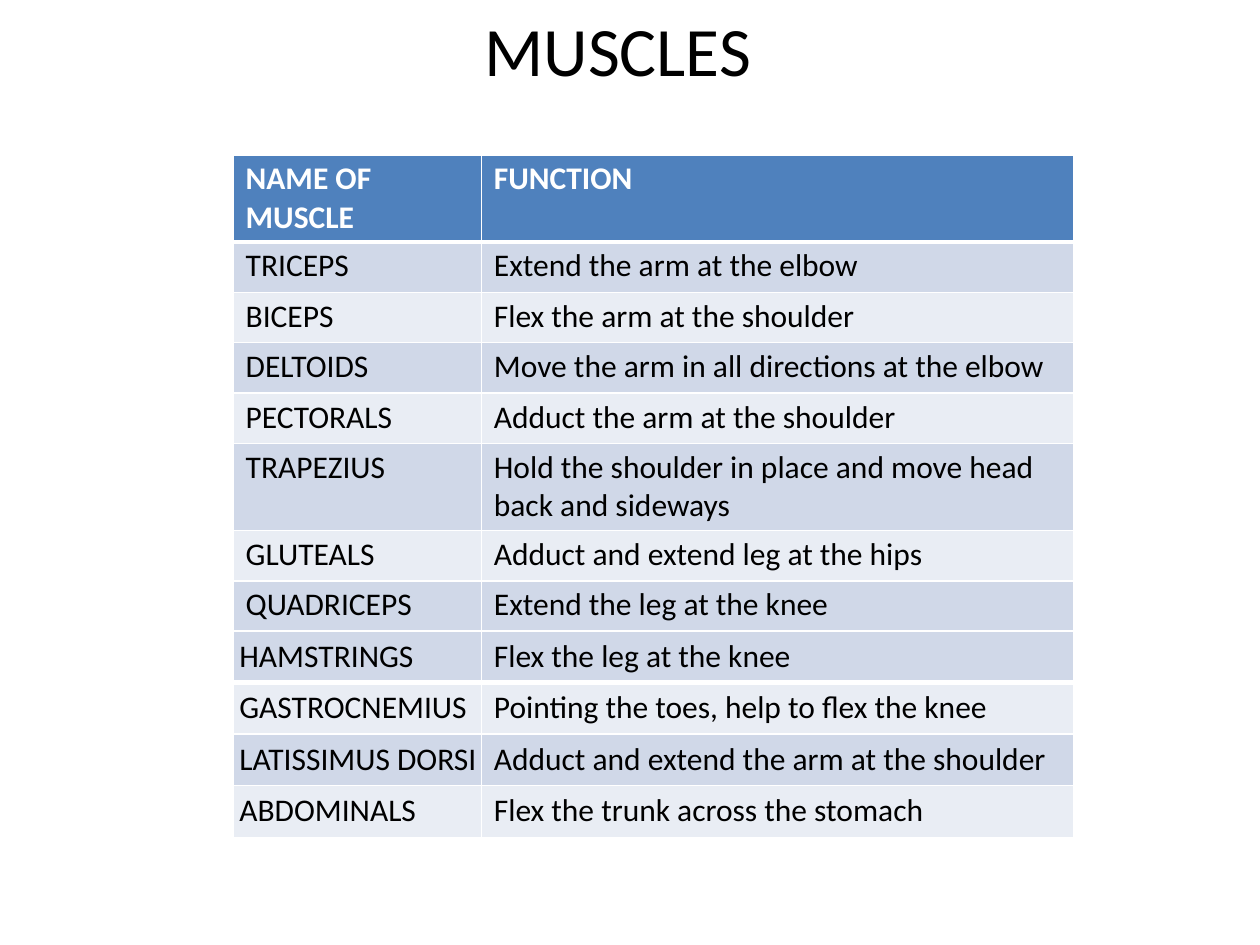
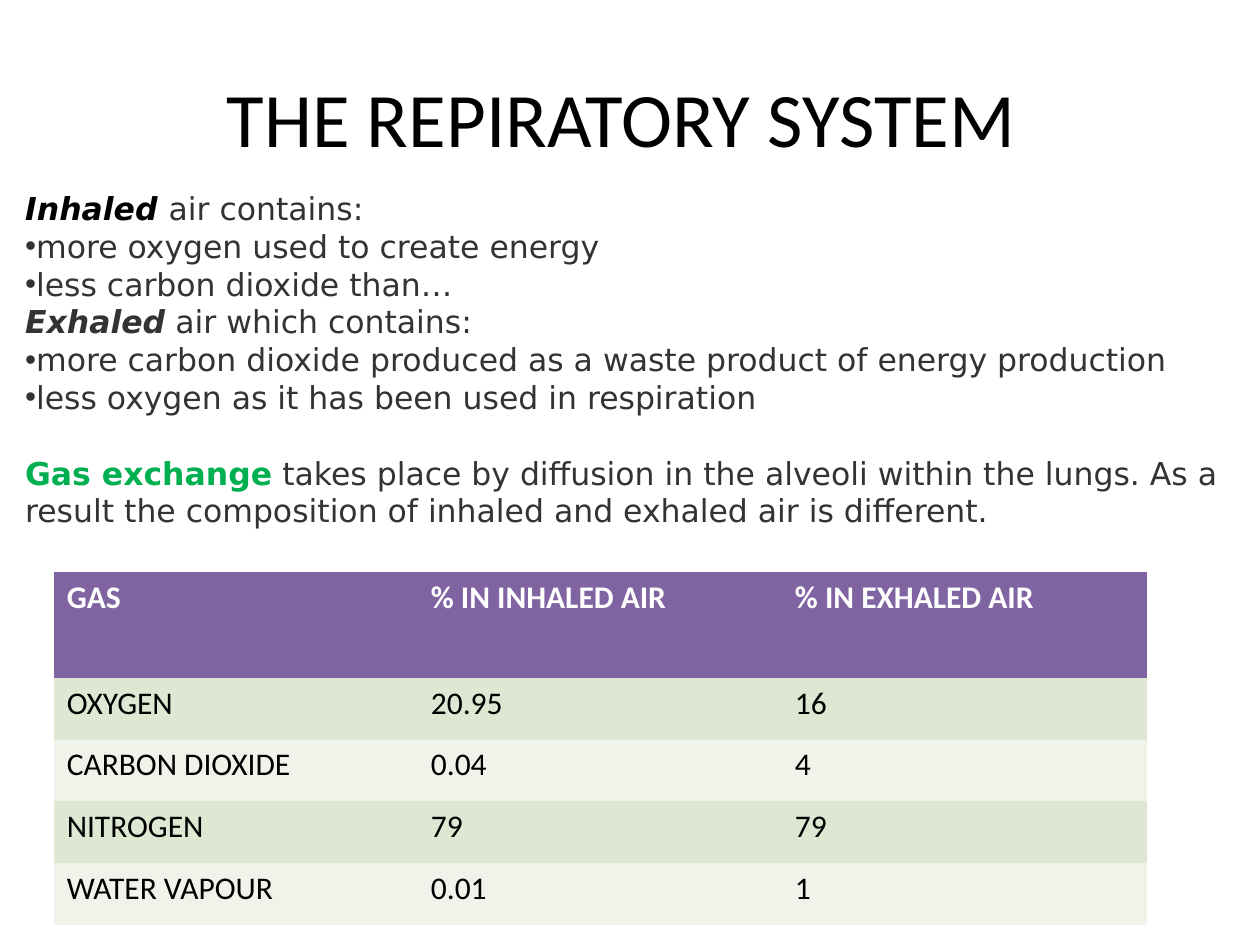
from dataclasses import dataclass
from typing import NamedTuple

from lxml.etree import SubElement
from pptx import Presentation
from pptx.dml.color import RGBColor
from pptx.enum.text import MSO_ANCHOR, MSO_AUTO_SIZE, PP_ALIGN
from pptx.oxml.ns import qn
from pptx.slide import Slide
from pptx.table import _Cell
from pptx.text.text import _Paragraph
from pptx.util import Inches, Pt


# Shared look
@dataclass(frozen=True)
class Theme:
    heading_font: str = "Calibri"
    body_font: str = "DejaVu Sans"
    bullet_font: str = "Arial"
    black: str = "000000"
    white: str = "FFFFFF"
    grey: str = "333333"
    green: str = "00B050"
    blue: str = "4F81BD"
    purple: str = "8064A2"
    blue_bands: tuple[str, str] = ("D0D8E8", "E9EDF4")
    green_bands: tuple[str, str] = ("DEE7D1", "EFF3EA")
    title_size: float = 44
    small_title_size: float = 39.6
    text_size: float = 18
    grid_width: float = 1
    thick_grid_width: float = 3


THEME = Theme()
TITLE_ONLY_LAYOUT = 5


class Box(NamedTuple):
    left: float
    top: float
    width: float
    height: float

    def lengths(self) -> list[int]:
        return [Inches(value) for value in self]


class Span(NamedTuple):
    text: str
    color: str = THEME.grey
    bold: bool = False
    italic: bool = False


class Line(NamedTuple):
    spans: list[Span]
    bullet: bool = False
    space_before: float = 0


@dataclass(frozen=True)
class TableSpec:
    box: Box
    column_widths: list[float]
    row_heights: list[float]
    rows: list[tuple[str, ...]]
    bands: tuple[str, str]
    header_fill: str = ""  # empty: the table has no header row
    has_grid: bool = True
    tight_first_column: bool = False
    vertical_margin: float = 0.05


def add_run(paragraph: _Paragraph, span: Span, font: str, size: float) -> None:
    run = paragraph.add_run()
    run.text = span.text
    run.font.name = font
    run.font.size = Pt(size)
    run.font.bold = span.bold
    run.font.italic = span.italic
    run.font.color.rgb = RGBColor.from_string(span.color)


def add_titled_slide(presentation: Presentation, text: str, box: Box, size: float) -> Slide:
    slide = presentation.slides.add_slide(presentation.slide_layouts[TITLE_ONLY_LAYOUT])
    title = slide.shapes.title
    title.left, title.top, title.width, title.height = box.lengths()
    frame = title.text_frame
    frame.auto_size = MSO_AUTO_SIZE.NONE
    frame.vertical_anchor = MSO_ANCHOR.MIDDLE
    paragraph = frame.paragraphs[0]
    paragraph.alignment = PP_ALIGN.CENTER
    add_run(paragraph, Span(text, THEME.black), THEME.heading_font, size)
    return slide


def set_borders(cell: _Cell, has_grid: bool, bottom_width: float) -> None:
    properties = cell._tc.get_or_add_tcPr()
    for index, side in enumerate(("lnL", "lnR", "lnT", "lnB")):
        width = bottom_width if side == "lnB" else THEME.grid_width
        border = SubElement(properties, qn(f"a:{side}"), w=str(Pt(width)))
        if has_grid:
            fill = SubElement(border, qn("a:solidFill"))
            SubElement(fill, qn("a:srgbClr"), val=THEME.white)
        else:
            SubElement(border, qn("a:noFill"))
        properties.insert(index, border)  # borders come before the fill


def add_data_table(slide: Slide, spec: TableSpec) -> None:
    graphic_frame = slide.shapes.add_table(
        len(spec.rows), len(spec.column_widths), *spec.box.lengths())
    table = graphic_frame.table
    table.first_row = bool(spec.header_fill)
    for column, width in zip(table.columns, spec.column_widths):
        column.width = Inches(width)
    for row, height in zip(table.rows, spec.row_heights):
        row.height = Inches(height)

    for row_index, texts in enumerate(spec.rows):
        is_header = row_index == 0 and bool(spec.header_fill)
        band = spec.bands[(row_index + 1) % 2]
        bottom_width = THEME.thick_grid_width if row_index == 0 else THEME.grid_width
        for column_index, text in enumerate(texts):
            cell = table.cell(row_index, column_index)
            cell.fill.solid()
            cell.fill.fore_color.rgb = RGBColor.from_string(
                spec.header_fill if is_header else band)
            set_borders(cell, spec.has_grid, bottom_width)
            cell.margin_top = cell.margin_bottom = Inches(spec.vertical_margin)
            if spec.tight_first_column and column_index == 0:
                cell.margin_left = Inches(0.05)
                cell.margin_right, cell.margin_bottom = Inches(0.03), Inches(0.01)
            color = THEME.white if is_header else THEME.black
            add_run(cell.text_frame.paragraphs[0], Span(text, color, is_header),
                    THEME.heading_font, THEME.text_size)


def add_bullet(paragraph: _Paragraph) -> None:
    properties = paragraph._p.get_or_add_pPr()
    properties.set("marL", "0")
    properties.set("indent", "0")
    SubElement(properties, qn("a:buFont"), typeface=THEME.bullet_font)
    SubElement(properties, qn("a:buChar"), char="•")


def add_body_text(slide: Slide, box: Box, lines: list[Line]) -> None:
    frame = slide.shapes.add_textbox(*box.lengths()).text_frame
    frame.word_wrap = True
    frame.vertical_anchor = MSO_ANCHOR.TOP
    frame.margin_left = frame.margin_right = frame.margin_bottom = 0
    frame.margin_top = Inches(0.03)
    for index, line in enumerate(lines):
        paragraph = frame.add_paragraph() if index else frame.paragraphs[0]
        paragraph.space_before = Pt(line.space_before)
        if line.bullet:
            add_bullet(paragraph)
        for span in line.spans:
            add_run(paragraph, span, THEME.body_font, THEME.text_size)


# Slide content
MUSCLE_COLUMNS = [1.97, 4.7]
ONE_LINE_ROW, TWO_LINE_ROW = 0.4, 0.69

# The upper table ends exactly where the lower one starts
UPPER_MUSCLES = TableSpec(
    box=Box(1.85, 1.23, 6.67, 3.78),
    column_widths=MUSCLE_COLUMNS,
    row_heights=[TWO_LINE_ROW, *[ONE_LINE_ROW] * 4, TWO_LINE_ROW, *[ONE_LINE_ROW] * 2],
    rows=[
        ("NAME OF MUSCLE", "FUNCTION"),
        ("TRICEPS", "Extend the arm at the elbow"),
        ("BICEPS", "Flex the arm at the shoulder"),
        ("DELTOIDS", "Move the arm in all directions at the elbow"),
        ("PECTORALS", "Adduct the arm at the shoulder"),
        ("TRAPEZIUS", "Hold the shoulder in place and move head back and sideways"),
        ("GLUTEALS", "Adduct and extend leg at the hips"),
        ("QUADRICEPS", "Extend the leg at the knee"),
    ],
    bands=THEME.blue_bands,
    header_fill=THEME.blue,
    vertical_margin=0.04,
)

LOWER_MUSCLES = TableSpec(
    box=Box(1.85, 5.01, 6.67, 1.62),
    column_widths=MUSCLE_COLUMNS,
    row_heights=[0.39] + [0.41] * 3,
    rows=[
        ("HAMSTRINGS", "Flex the leg at the knee"),
        ("GASTROCNEMIUS", "Pointing the toes, help to flex the knee"),
        ("LATISSIMUS DORSI", "Adduct and extend the arm at the shoulder"),
        ("ABDOMINALS", "Flex the trunk across the stomach"),
    ],
    bands=THEME.blue_bands[::-1],
    tight_first_column=True,
)

GASES = TableSpec(
    box=Box(0.43, 4.54, 8.66, 2.79),
    column_widths=[2.89] * 3,
    row_heights=[0.84] + [0.49] * 4,
    rows=[
        ("GAS", "% IN INHALED AIR", "% IN EXHALED AIR"),
        ("OXYGEN", "20.95", "16"),
        ("CARBON DIOXIDE", "0.04", "4"),
        ("NITROGEN", "79", "79"),
        ("WATER VAPOUR", "0.01", "1"),
    ],
    bands=THEME.green_bands,
    header_fill=THEME.purple,
    has_grid=False,
)

BREATHING_LINES = [
    Line([Span("Inhaled ", THEME.black, True, True), Span("air contains:")]),
    Line([Span("more oxygen used to create energy")], bullet=True),
    Line([Span("less carbon dioxide than…")], bullet=True),
    Line([Span("Exhaled", bold=True, italic=True), Span(" air which contains:")]),
    Line([Span("more carbon dioxide produced as a waste product of energy production")],
         bullet=True),
    Line([Span("less oxygen as it has been used in respiration")], bullet=True),
    Line([Span("Gas exchange", THEME.green, True),
          Span(" takes place by diffusion in the alveoli within the lungs. As a result "
               "the composition of inhaled and exhaled air is different.")],
         space_before=21.6),
]


def main() -> None:
    presentation = Presentation()
    presentation.slide_width, presentation.slide_height = Inches(10), Inches(7.5)

    # Muscles and what they do
    muscles = add_titled_slide(
        presentation, "MUSCLES ", Box(0.59, 0, 8.75, 0.77), THEME.small_title_size)
    add_data_table(muscles, UPPER_MUSCLES)
    add_data_table(muscles, LOWER_MUSCLES)

    # Inhaled and exhaled air
    respiration = add_titled_slide(
        presentation, "THE REPIRATORY SYSTEM ", Box(0.5, 0.3, 9, 1.25), THEME.title_size)
    add_body_text(respiration, Box(0.2, 1.47, 9.64, 3.05), BREATHING_LINES)
    add_data_table(respiration, GASES)

    presentation.save("out.pptx")


if __name__ == "__main__":
    main()
